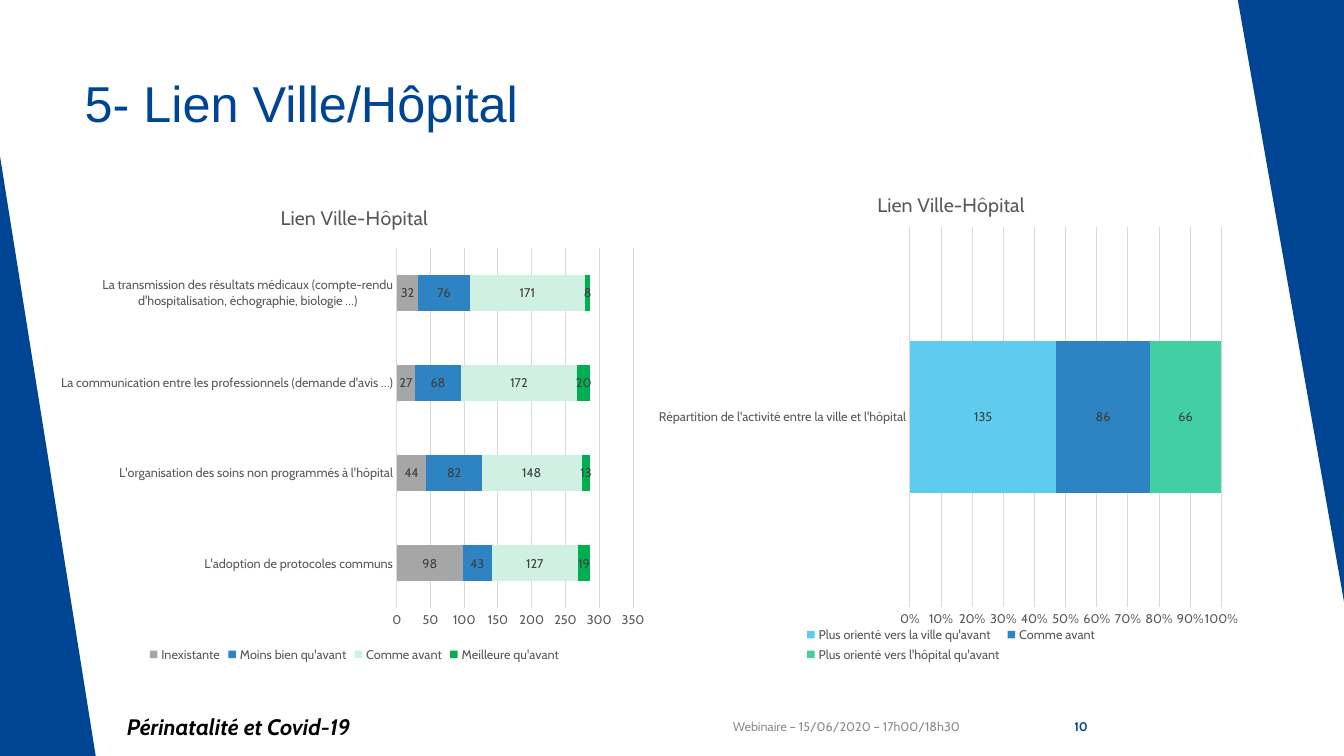
from lxml import etree
from pptx import Presentation
from pptx.chart.data import CategoryChartData
from pptx.dml.color import RGBColor
from pptx.enum.chart import XL_CHART_TYPE, XL_LABEL_POSITION, XL_LEGEND_POSITION, XL_TICK_MARK
from pptx.enum.shapes import MSO_SHAPE
from pptx.enum.text import MSO_ANCHOR, PP_ALIGN
from pptx.oxml.ns import qn
from pptx.util import Inches, Pt

STACKED = XL_CHART_TYPE.BAR_STACKED
STACKED_100 = XL_CHART_TYPE.BAR_STACKED_100
CENTER = XL_LABEL_POSITION.CENTER
BOTTOM = XL_LEGEND_POSITION.BOTTOM
NO_TICK = XL_TICK_MARK.NONE
TRIANGLE = MSO_SHAPE.RIGHT_TRIANGLE
TOP, MIDDLE = MSO_ANCHOR.TOP, MSO_ANCHOR.MIDDLE
LEFT, RIGHT = PP_ALIGN.LEFT, PP_ALIGN.RIGHT

W, H = Inches(13.33), Inches(7.5)
FONT = "Cabin"
COLORS = {
    "navy": "004494", "black": "000000", "footer": "8C8C8C",
    "text": "595959", "label": "404040", "grid": "D9D9D9",
    "grey": "A6A6A6", "blue": "2E83C3", "mint": "CFF0E3",
    "green": "00B050", "sky": "5FCBEF", "teal": "42D0A2",
}


def rgb(name):
    return RGBColor.from_string(COLORS[name])


def place(x, y, w, h):
    """Turn percentages of the slide into left, top, width, height."""
    return [int(side * share / 100) for side, share in zip((W, H, W, H), (x, y, w, h))]


def style(font, size, color, name=FONT, bold=False, italic=False):
    font.size, font.name = Pt(size), name
    font.bold, font.italic = bold, italic
    font.color.rgb = rgb(color)


def add_triangle(s, area, rotation=0):
    sp = s.shapes.add_shape(TRIANGLE, *place(*area))
    sp.rotation = rotation
    sp.shadow.inherit = False
    sp.fill.solid()
    sp.fill.fore_color.rgb = rgb("navy")
    sp.line.fill.background()


def add_title(s, text, area):
    sp = s.shapes.title
    sp.left, sp.top, sp.width, sp.height = place(*area)
    tf = sp.text_frame
    tf.text, tf.vertical_anchor = text, TOP
    p = tf.paragraphs[0]
    p.alignment = LEFT
    style(p.font, 36, "navy", "Arial")


def add_footer(s, text, area, size, color, align=LEFT, **weight):
    tf = s.shapes.add_textbox(*place(*area)).text_frame
    tf.word_wrap, tf.vertical_anchor = True, MIDDLE
    p = tf.paragraphs[0]
    p.text, p.alignment = text, align
    style(p.font, size, color, **weight)


def set_plot_area(chart, shares):
    """Fix the inner plot area, given as shares of the chart."""
    plot_area = chart._chartSpace.chart.plotArea
    for old in plot_area.findall(qn("c:layout")):
        plot_area.remove(old)
    layout = etree.Element(qn("c:layout"))
    manual = etree.SubElement(layout, qn("c:manualLayout"))
    settings = [("layoutTarget", "inner"), ("xMode", "edge"), ("yMode", "edge")]
    for tag, value in settings + list(zip("xywh", shares)):
        etree.SubElement(manual, qn("c:" + tag)).set("val", str(value))
    plot_area.insert(0, layout)


def add_bars(s, kind, area, plot_shares, categories, series, top, step, axis_format):
    data = CategoryChartData()
    data.categories = categories
    for name, values, _ in series:
        data.add_series(name, values)
    chart = s.shapes.add_chart(kind, *place(*area), data).chart
    style(chart.font, 10, "black")
    set_plot_area(chart, plot_shares)

    # Title and legend
    chart.has_title = True
    chart.chart_title.include_in_layout = False
    p = chart.chart_title.text_frame.paragraphs[0]
    p.text = "Lien Ville-Hôpital"
    style(p.font, 14, "text")
    chart.has_legend = True
    chart.legend.position = BOTTOM
    chart.legend.include_in_layout = False
    style(chart.legend.font, 9, "text")

    # Axes
    for axis in (chart.category_axis, chart.value_axis):
        axis.major_tick_mark = axis.minor_tick_mark = NO_TICK
        style(axis.tick_labels.font, 9, "text")
        axis.format.line.fill.background()
    if kind == STACKED:
        line = chart.category_axis.format.line
        line.color.rgb, line.width = rgb("grid"), Pt(0.75)
    axis = chart.value_axis
    axis.minimum_scale, axis.maximum_scale, axis.major_unit = 0, top, step
    axis.tick_labels.number_format = axis_format
    axis.tick_labels.number_format_is_linked = False
    axis.has_major_gridlines = True
    line = axis.major_gridlines.format.line
    line.color.rgb, line.width = rgb("grid"), Pt(0.75)

    # Bars and their values
    plot = chart.plots[0]
    plot.gap_width, plot.overlap, plot.vary_by_categories = 150, 100, False
    for bars, (_, _, color) in zip(plot.series, series):
        bars.format.fill.solid()
        bars.format.fill.fore_color.rgb = rgb(color)
        labels = bars.data_labels
        labels.show_value, labels.position = True, CENTER
        style(labels.font, 9, "label")


def main():
    prs = Presentation()
    prs.slide_width, prs.slide_height = W, H
    s = prs.slides.add_slide(prs.slide_layouts[5])

    # Side bands and title
    add_triangle(s, (0, 20.67, 7.12, 79.33))
    add_triangle(s, (92.1, 0, 7.9, 79.6), 180)
    add_title(s, "5- Lien Ville/Hôpital", (5.55, 8.93, 70.5, 19.2))

    # Footer row
    row, height = 93.47, 5.33
    add_footer(s, "Webinaire – 15/06/2020 – 17h00/18h30", (52.65, row, 19.5, height),
               9, "footer", RIGHT)
    add_footer(s, "Périnatalité et Covid-19", (8.7, row, 40.12, height),
               16, "black", bold=True, italic=True)
    add_footer(s, "10", (76.05, row, 5.63, height), 9, "navy", RIGHT, bold=True)

    # Quality of the links
    add_bars(
        s, STACKED, (3.83, 24.53, 45.08, 63.6), (0.57, 0.13, 0.39, 0.75),
        ["L'adoption de protocoles communs",
         "L'organisation des soins non programmés à l'hôpital",
         "La communication entre les professionnels (demande d'avis …)",
         "La transmission des résultats médicaux (compte-rendu d'hospitalisation, "
         "échographie, biologie …)"],
        [("Inexistante", (98, 44, 27, 32), "grey"),
         ("Moins bien qu'avant", (43, 82, 68, 76), "blue"),
         ("Comme avant", (127, 148, 172, 171), "mint"),
         ("Meilleure qu'avant", (19, 13, 20, 8), "green")],
        350, 50, "General")

    # Split of the activity
    add_bars(
        s, STACKED_100, (48.9, 22.8, 43.73, 65.33), (0.43, 0.11, 0.53, 0.77),
        ["Répartition de l'activité entre la ville et l'hôpital"],
        [("Plus orienté vers la ville qu'avant", (135,), "sky"),
         ("Comme avant", (86,), "blue"),
         ("Plus orienté vers l'hôpital qu'avant", (66,), "teal")],
        1, 0.1, "0%")

    prs.save("out.pptx")


if __name__ == "__main__":
    main()
